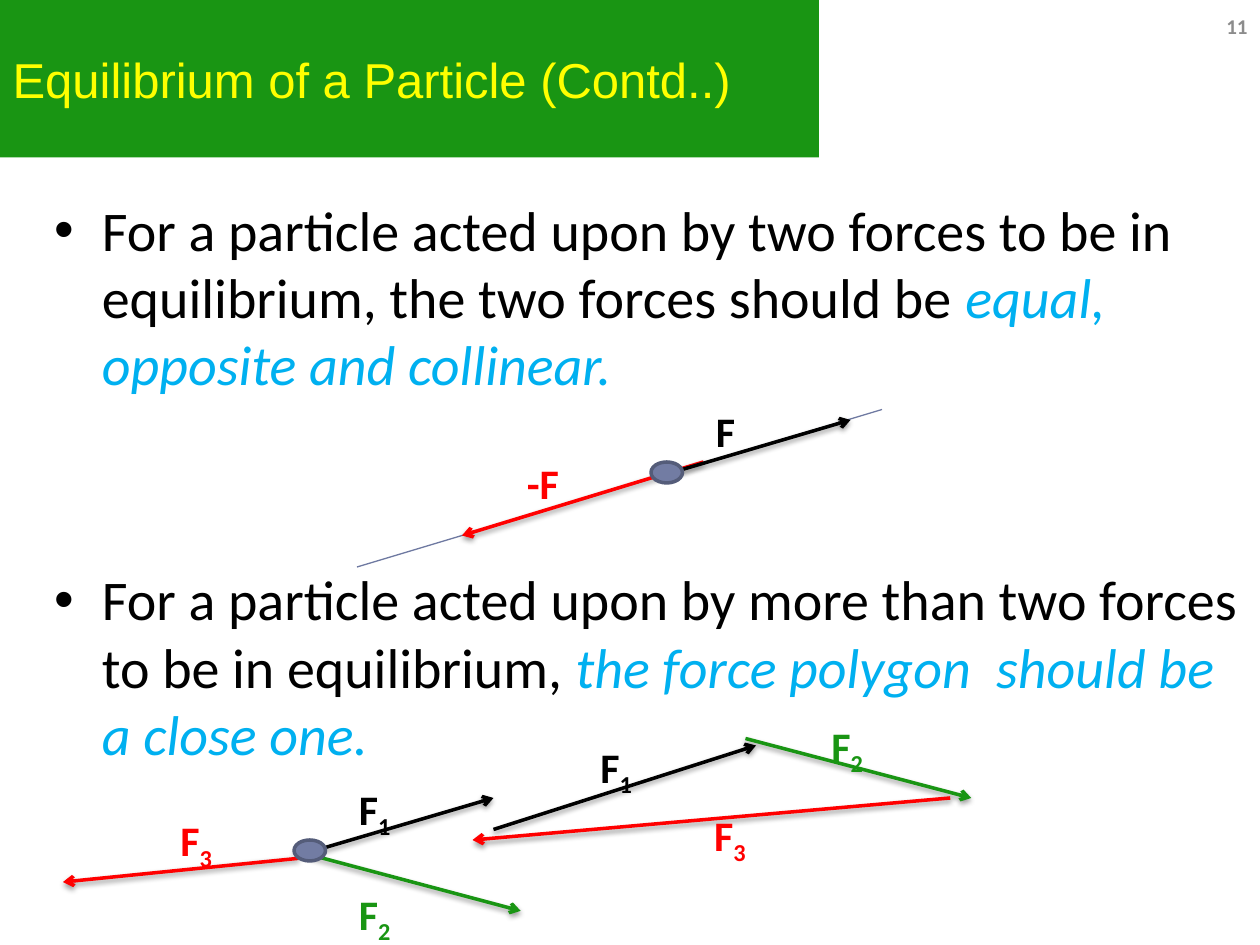
import dataclasses
import typing

import lxml.etree
import pptx
import pptx.dml.color
import pptx.enum.shapes
import pptx.enum.text
import pptx.oxml.ns
import pptx.util

Pt = pptx.util.Pt
ALIGN = pptx.enum.text.PP_ALIGN
ANCHOR = pptx.enum.text.MSO_ANCHOR
FIT = pptx.enum.text.MSO_AUTO_SIZE
SHAPE = pptx.enum.shapes.MSO_SHAPE
LINE = pptx.enum.shapes.MSO_CONNECTOR.STRAIGHT

BLACK, RED, GREEN = "000000", "FF0000", "199513"
BLUE, YELLOW, GREY = "00B0F0", "FFFF00", "8C8C8C"


@dataclasses.dataclass
class Force:
    start: tuple[float, float]
    end: tuple[float, float]
    color: str


@dataclasses.dataclass
class Label:
    left: float
    top: float
    width: float
    text: str
    sub: str
    color: str


AXIS = Force((204, 324), (504, 234), "6E79A1")
FORCES = [
    Force((168, 486), (297.5, 520.5), GREEN),
    Force((402, 264), (264, 306), RED),
    Force((384, 270), (486, 240), BLACK),
    Force((170.5, 490.5), (36, 504), RED),
    Force((180, 486), (282, 456), BLACK),
    Force((282, 474), (432, 426), BLACK),
    Force((426, 422), (555, 456), GREEN),
    Force((543, 456), (270, 480), RED),
]
NODES = [(372, 264), (168, 480)]
LABELS = [
    Label(402, 228, 42, "F", "", BLACK),
    Label(294, 258, 42, "-F", "", RED),
    Label(198, 444, 48, "F", "1", BLACK),
    Label(96, 462, 78, "F", "3", RED),
    Label(198, 504, 78, "F", "2", GREEN),
    Label(336, 420, 48, "F", "1", BLACK),
    Label(401, 459, 78, "F", "3", RED),
    Label(468, 408, 78, "F", "2", GREEN),
]
POINTS = [
    (
        "For a particle acted upon by two forces to be in equilibrium, "
        "the two forces should be ",
        "equal, opposite and collinear.",
        0,
    ),
    (
        "For a particle acted upon by more than two forces to be in equilibrium, ",
        "the force polygon  should be  a close one.",
        96,
    ),
]


def paint(target: typing.Any, color: str) -> None:
    target.rgb = pptx.dml.color.RGBColor.from_string(color)


def fill(shape: typing.Any, color: str) -> None:
    shape.fill.solid()
    paint(shape.fill.fore_color, color)


def style(target: typing.Any, form: dict[str, typing.Any]) -> None:
    for name, value in form.items():
        setattr(target, name, value)


def write(para: typing.Any, text: str, color: str, **form: typing.Any) -> typing.Any:
    run = para.add_run()
    run.text = text
    style(run.font, {"name": "Calibri", **form})
    paint(run.font.color, color)
    return run


def place(shape: typing.Any, left: float, top: float, width: float, height: float) -> None:
    box = {"left": left, "top": top, "width": width, "height": height}
    style(shape, {name: Pt(value) for name, value in box.items()})


def node(parent: typing.Any, tag: str, **attrs: str) -> typing.Any:
    return lxml.etree.SubElement(parent, pptx.oxml.ns.qn(tag), attrs)


def draw(slide: typing.Any, force: Force, width: float) -> typing.Any:
    ends = [Pt(value) for value in (*force.start, *force.end)]
    line = slide.shapes.add_connector(LINE, *ends)
    line.line.width = Pt(width)
    paint(line.line.color, force.color)
    return node(line._element.spPr, "a:effectLst")


def arrow(slide: typing.Any, force: Force) -> None:
    effect = draw(slide, force, 2)
    edge = effect.getparent().find(pptx.oxml.ns.qn("a:ln"))
    node(edge, "a:tailEnd", type="arrow")
    shade = node(
        effect, "a:outerShdw", blurRad=str(Pt(3.1)), dist=str(Pt(1.6)),
        dir="5400000", rotWithShape="0",
    )
    tint = node(shade, "a:srgbClr", val=BLACK)
    node(tint, "a:alpha", val="38000")


def dot(slide: typing.Any, left: float, top: float) -> None:
    shape = slide.shapes.add_shape(SHAPE.OVAL, Pt(left), Pt(top), Pt(18), Pt(12))
    shape.shadow.inherit = False
    fill(shape, "727CA3")
    shape.line.width = Pt(2)
    paint(shape.line.color, "545C79")


def tag(slide: typing.Any, label: Label) -> None:
    box = slide.shapes.add_textbox(Pt(label.left), Pt(label.top), Pt(label.width), Pt(36))
    style(box.text_frame, {"word_wrap": True, "auto_size": FIT.SHAPE_TO_FIT_TEXT})
    para = box.text_frame.paragraphs[0]
    form = {"size": Pt(24), "bold": True}
    write(para, label.text, label.color, **form)
    if label.sub:
        run = write(para, label.sub, label.color, **form)
        run.font._element.set("baseline", "-25000")


def head(slide: typing.Any) -> None:
    title = slide.shapes.title
    place(title, 0, 0, 468, 90)
    fill(title, GREEN)
    frame = title.text_frame
    style(frame, {"auto_size": FIT.NONE, "vertical_anchor": ANCHOR.MIDDLE})
    para = frame.paragraphs[0]
    para.alignment = ALIGN.LEFT
    write(para, "Equilibrium of a Particle (Contd..)", YELLOW, name="Arial", size=Pt(28))


def body(slide: typing.Any) -> None:
    shape = slide.placeholders[1]
    place(shape, 24, 108, 696, 356)
    frame = shape.text_frame
    frame.auto_size = FIT.NONE
    for index, (plain, stress, gap) in enumerate(POINTS):
        para = frame.add_paragraph() if index else frame.paragraphs[0]
        para.space_before = Pt(gap)
        write(para, plain, BLACK, size=Pt(32))
        write(para, stress, BLUE, size=Pt(32), italic=True)


def page(slide: typing.Any) -> None:
    box = slide.shapes.add_textbox(Pt(654), Pt(0), Pt(66), Pt(30))
    style(box.text_frame, {"word_wrap": True, "vertical_anchor": ANCHOR.MIDDLE})
    para = box.text_frame.paragraphs[0]
    para.alignment = ALIGN.RIGHT
    write(para, "11", GREY, size=Pt(12), bold=True)


def main() -> None:
    deck = pptx.Presentation()
    style(deck, {"slide_width": Pt(720), "slide_height": Pt(540)})
    slide = deck.slides.add_slide(deck.slide_layouts[1])
    head(slide)
    body(slide)
    page(slide)
    draw(slide, AXIS, 0.75)
    for force in FORCES:
        arrow(slide, force)
    for left, top in NODES:
        dot(slide, left, top)
    for label in LABELS:
        tag(slide, label)
    deck.save("out.pptx")


if __name__ == "__main__":
    main()
